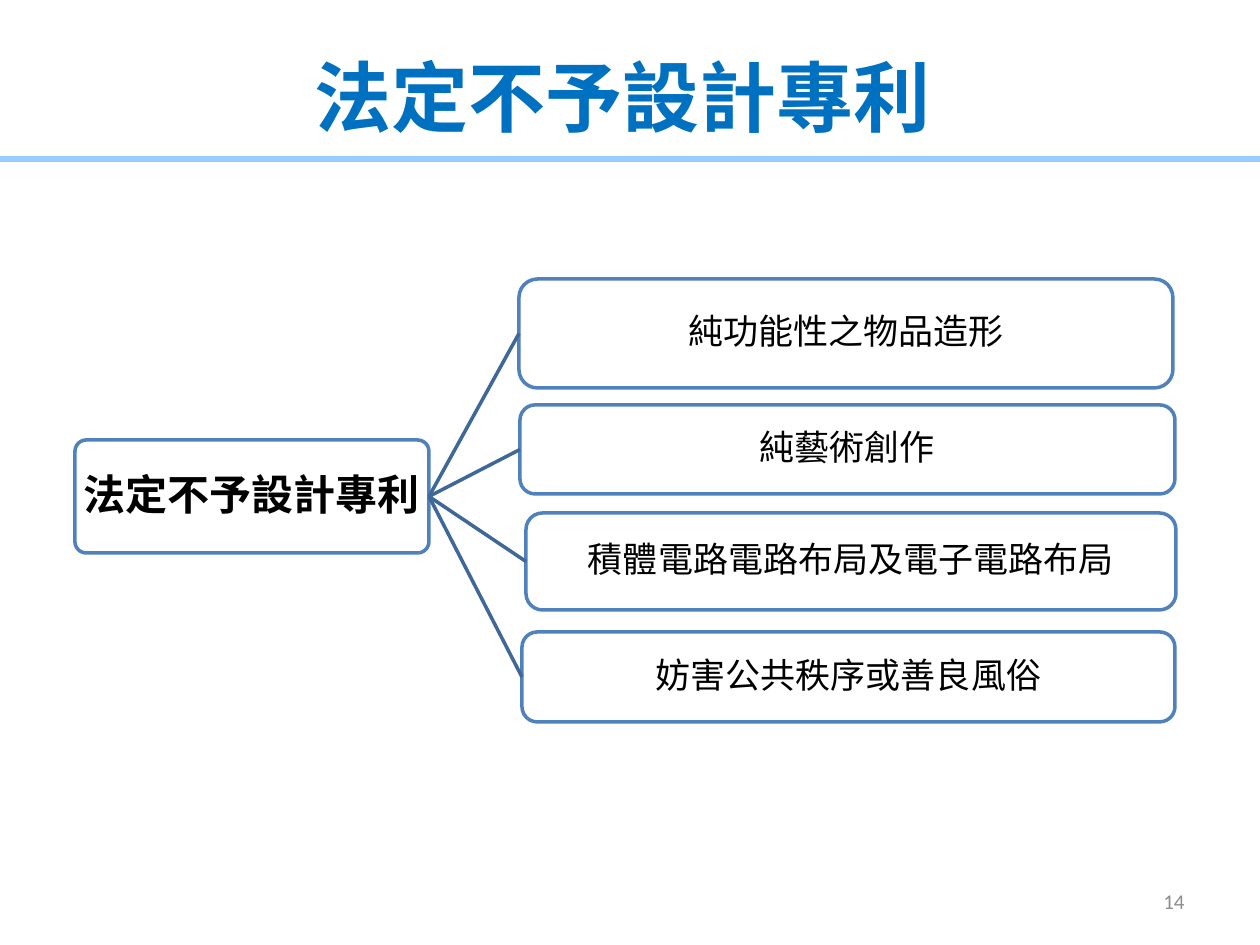
from lxml.etree import SubElement
from pptx import Presentation
from pptx.dml.color import RGBColor
from pptx.enum.shapes import MSO_CONNECTOR as CONNECTOR, MSO_SHAPE as SHAPE
from pptx.enum.text import MSO_ANCHOR as ANCHOR, PP_ALIGN as ALIGN
from pptx.oxml.ns import qn
from pptx.util import Inches, Pt

PX = Inches(1) / 126
WHITE = RGBColor(0xFF, 0xFF, 0xFF)
BLACK = RGBColor(0, 0, 0)
TITLE_BLUE = RGBColor(0x00, 0x70, 0xC0)
RULE_BLUE = RGBColor(0x99, 0xCC, 0xFF)
BORDER_BLUE = RGBColor(0x4F, 0x81, 0xBD)
BRANCH_BLUE = RGBColor(0x3F, 0x67, 0x97)
GREY = RGBColor(0x8C, 0x8C, 0x8C)
CJK_FONT = "Noto Sans CJK SC"


def px(*lengths):
    return [round(length * PX) for length in lengths]


def write(shape, text, size, color, align, font=CJK_FONT, bold=False):
    shape.text_frame.text = text
    paragraph = shape.text_frame.paragraphs[0]
    paragraph.alignment = align
    paragraph.font.name = font
    paragraph.font.size = Pt(size)
    paragraph.font.bold = bold
    paragraph.font.color.rgb = color
    defaults = paragraph._p.pPr.find(qn("a:defRPr"))
    SubElement(defaults, qn("a:ea")).set("typeface", font)
    return paragraph


prs = Presentation()
prs.slide_width, prs.slide_height = px(1260, 945)
slide = prs.slides.add_slide(prs.slide_layouts[5])
shapes = slide.shapes

rule = shapes.add_shape(SHAPE.RECTANGLE, *px(0, 156, 1260, 6))
rule.shadow.inherit = False
rule.fill.solid()
rule.fill.fore_color.rgb = RULE_BLUE
rule.line.fill.background()

title = shapes.title
title.left, title.top, title.width, title.height = px(302, 37, 912, 118)
title.text_frame.vertical_anchor = ANCHOR.MIDDLE
write(title, "法定不予設計專利", 44, TITLE_BLUE, ALIGN.LEFT, bold=True)

page_number = shapes.add_textbox(*px(903, 876, 294, 50))
page_number.text_frame.word_wrap = True
page_number.text_frame.vertical_anchor = ANCHOR.MIDDLE
write(page_number, "14", 12, GREY, ALIGN.RIGHT, font="Calibri")

topics = [
    ("法定不予設計專利", 24, 0.1, (75, 440, 354, 113)),
    ("純功能性之物品造形", 20, 0.17, (519, 279, 654, 109)),
    ("純藝術創作", 20, 0.17, (520, 405, 655, 89)),
    ("積體電路電路布局及電子電路布局", 20, 0.17, (526, 513, 650, 97)),
    ("妨害公共秩序或善良風俗", 20, 0.17, (522, 632, 653, 90)),
]
boxes = []
for text, size, corner, bounds in topics:
    box = shapes.add_shape(SHAPE.ROUNDED_RECTANGLE, *px(*bounds))
    box.adjustments[0] = corner
    box.shadow.inherit = False
    box.fill.solid()
    box.fill.fore_color.rgb = WHITE
    box.line.color.rgb = BORDER_BLUE
    box.line.width = Pt(2)
    frame = box.text_frame
    frame.word_wrap = True
    frame.vertical_anchor = ANCHOR.MIDDLE
    frame.margin_left, frame.margin_right, frame.margin_top, frame.margin_bottom = px(3, 3, 3, 3)
    paragraph = write(box, text, size, BLACK, ALIGN.CENTER, bold=not boxes)
    paragraph.line_spacing = 0.9
    boxes.append(box)

root, *exclusions = boxes
for exclusion in exclusions:
    branch = shapes.add_connector(CONNECTOR.STRAIGHT, 0, 0, 0, 0)
    branch.begin_connect(root, 3)
    branch.end_connect(exclusion, 1)
    branch.line.color.rgb = BRANCH_BLUE
    branch.line.width = Pt(2)
    SubElement(branch._element.spPr, qn("a:effectLst"))

prs.save("out.pptx")
